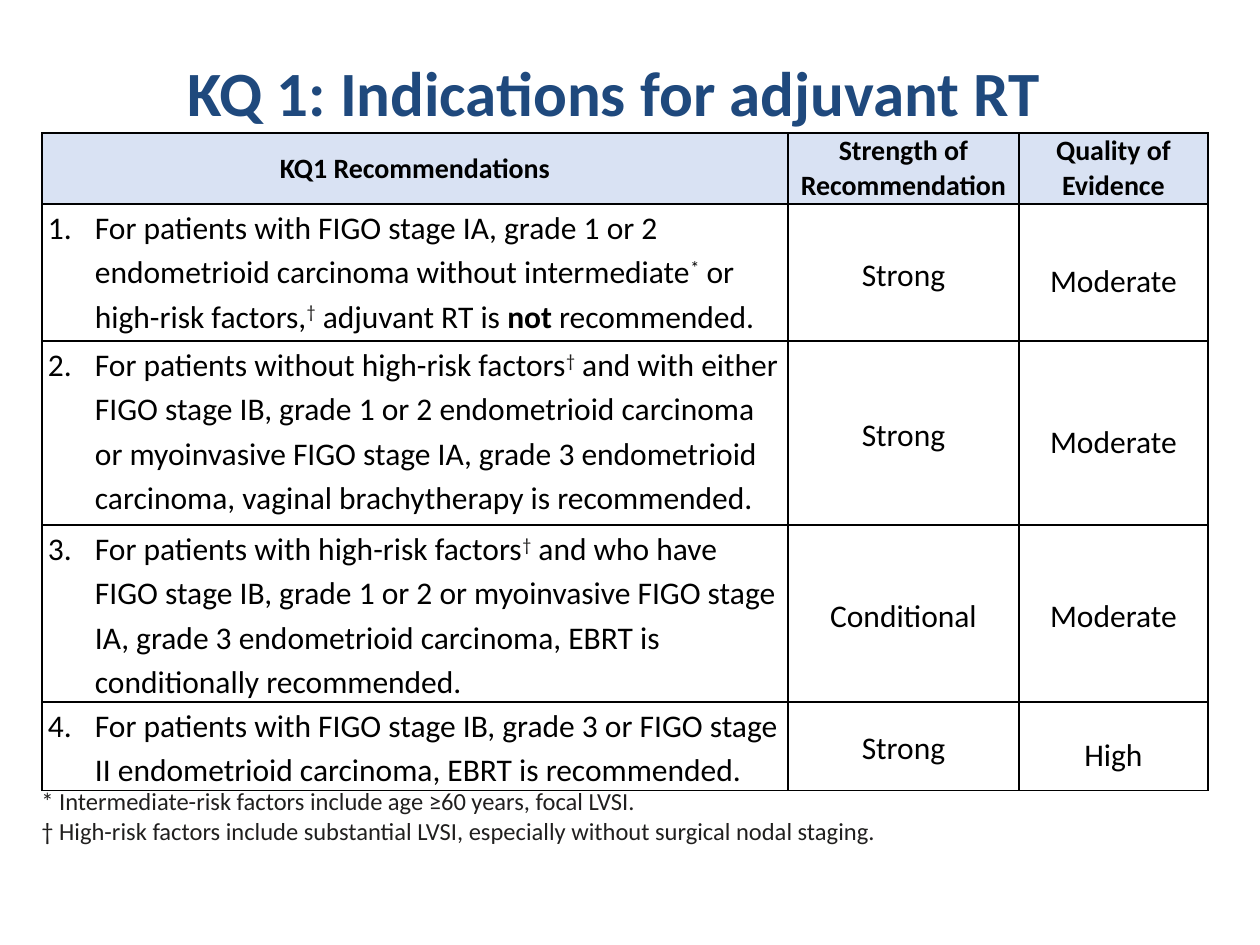
from pptx import Presentation
from pptx.dml.color import RGBColor
from pptx.enum.text import MSO_ANCHOR as Anchor, PP_ALIGN as Align
from pptx.oxml.ns import qn
from lxml.etree import SubElement as Sub

PX = 914400 / 126
NAVY = RGBColor(0x1F, 0x49, 0x7D)
BLACK = RGBColor(0, 0, 0)
INK = RGBColor(0x20, 0x1F, 0x1E)
PALE = RGBColor(0xD9, 0xE2, 0xF3)


def px(n):
    return round(n * PX)


def write(para, text, size=18, color=BLACK, bold=False, font="Calibri", sup=False):
    run = para.add_run()
    run.text = text
    face = run.font
    face.name, face.size, face.bold = font, size * 12700, bold
    face.color.rgb = color
    if sup:
        run._r.get_or_add_rPr().set("baseline", "30000")


def indent(para, left, first=0):
    props = para._p.get_or_add_pPr()
    props.set("marL", str(px(left)))
    props.set("indent", str(px(first)))
    return props


def number(para, start):
    props = indent(para, 47, -47)
    Sub(props, qn("a:buAutoNum"), type="arabicPeriod", startAt=str(start))


def border(cell, width=12700):
    props = cell._tc.get_or_add_tcPr()
    for i, side in enumerate(("lnL", "lnR", "lnT", "lnB")):
        line = Sub(props, qn("a:" + side), w=str(width))
        fill = Sub(line, qn("a:solidFill"))
        Sub(fill, qn("a:srgbClr"), val=str(BLACK))
        props.insert(i, line)


class Deck:
    def __init__(self, wide, high):
        self.prs = Presentation()
        self.prs.slide_width, self.prs.slide_height = px(wide), px(high)
        self.slide = self.prs.slides.add_slide(self.prs.slide_layouts[5])

    def title(self, text, *box):
        shape = self.slide.shapes.title
        shape.left, shape.top, shape.width, shape.height = map(px, box)
        frame = shape.text_frame
        frame.vertical_anchor, frame.margin_top = Anchor.TOP, px(11)
        para = frame.paragraphs[0]
        para.alignment = Align.CENTER
        write(para, text, size=36, color=NAVY, bold=True)

    def table(self, left, top, cols, rows):
        box = map(px, (left, top, sum(cols), sum(rows)))
        grid = self.slide.shapes.add_table(len(rows), len(cols), *box).table
        grid.first_row = grid.horz_banding = False
        for col, wide in zip(grid.columns, cols):
            col.width = px(wide)
        for row, high in zip(grid.rows, rows):
            row.height = px(high)
        return grid

    def cell(self, cell, parts, fill=None, align=Align.CENTER, space=None, start=None, **style):
        cell.margin_left = cell.margin_right = px(6)
        cell.margin_top = cell.margin_bottom = 0
        cell.vertical_anchor = Anchor.TOP if start else Anchor.MIDDLE
        if fill is None:
            cell.fill.background()
        else:
            cell.fill.solid()
            cell.fill.fore_color.rgb = fill
        border(cell)
        para = cell.text_frame.paragraphs[0]
        para.alignment = align
        if space:
            para.line_spacing = space
        if start:
            number(para, start)
        for text, look in parts:
            write(para, text, **style, **look)

    def notes(self, lines, *box):
        frame = self.slide.shapes.add_textbox(*map(px, box)).text_frame
        frame.word_wrap = True
        for i, text in enumerate(lines):
            para = frame.add_paragraph() if i else frame.paragraphs[0]
            indent(para, 8)
            write(para, text, size=14, color=INK)


SUP = {"sup": True}
MARK = ("†", {"sup": True, "color": INK})
HEADS = ("KQ1 Recommendations", "Strength of Recommendation", "Quality of Evidence")
# Recommendation, strength, quality, line spacing of quality
ADVICE = [
    ([("For patients with FIGO stage IA, grade 1 or 2 endometrioid carcinoma without intermediate", {}),
      ("*", SUP), (" or high-risk factors,", {}), MARK, (" adjuvant RT is ", {}),
      ("not", {"bold": True}), (" recommended.", {})], "Strong", "Moderate", 1.5),
    ([("For patients without high-risk factors", {}), MARK,
      (" and with either FIGO stage IB, grade 1 or 2 endometrioid carcinoma or myoinvasive "
       "FIGO stage IA, grade 3 endometrioid carcinoma, vaginal brachytherapy is recommended.", {})],
     "Strong", "Moderate", 1.5),
    ([("For patients with high-risk factors", {}), MARK,
      (" and who have FIGO stage IB, grade 1 or 2 or myoinvasive FIGO stage IA, grade 3 "
       "endometrioid carcinoma, EBRT is conditionally recommended.", {})],
     "Conditional", "Moderate", 1.15),
    ([("For patients with FIGO stage IB, grade 3 or FIGO stage II endometrioid carcinoma, "
       "EBRT is recommended.", {})], "Strong", "High", 1.5),
]


def main():
    deck = Deck(1260, 945)
    deck.title("KQ 1: Indications for adjuvant RT", 31, 42, 1166, 105)

    # Table of recommendations
    grid = deck.table(42, 133, (746, 231, 189), (71, 137, 184, 177, 88))
    for c, head in enumerate(HEADS):
        deck.cell(grid.cell(0, c), [(head, {})], fill=PALE, size=16, bold=True)
    for r, (parts, force, grade, space) in enumerate(ADVICE, 1):
        deck.cell(grid.cell(r, 0), parts, align=Align.LEFT, space=1.15, start=r)
        deck.cell(grid.cell(r, 1), [(force, {})], space=1.15)
        deck.cell(grid.cell(r, 2), [(grade, {})], space=space)

    # Footnotes
    deck.notes(("* Intermediate-risk factors include age ≥60 years, focal LVSI.",
                "† High-risk factors include substantial LVSI, especially without surgical nodal staging."),
               21, 780, 1176, 111)
    deck.prs.save("out.pptx")


if __name__ == "__main__":
    main()
